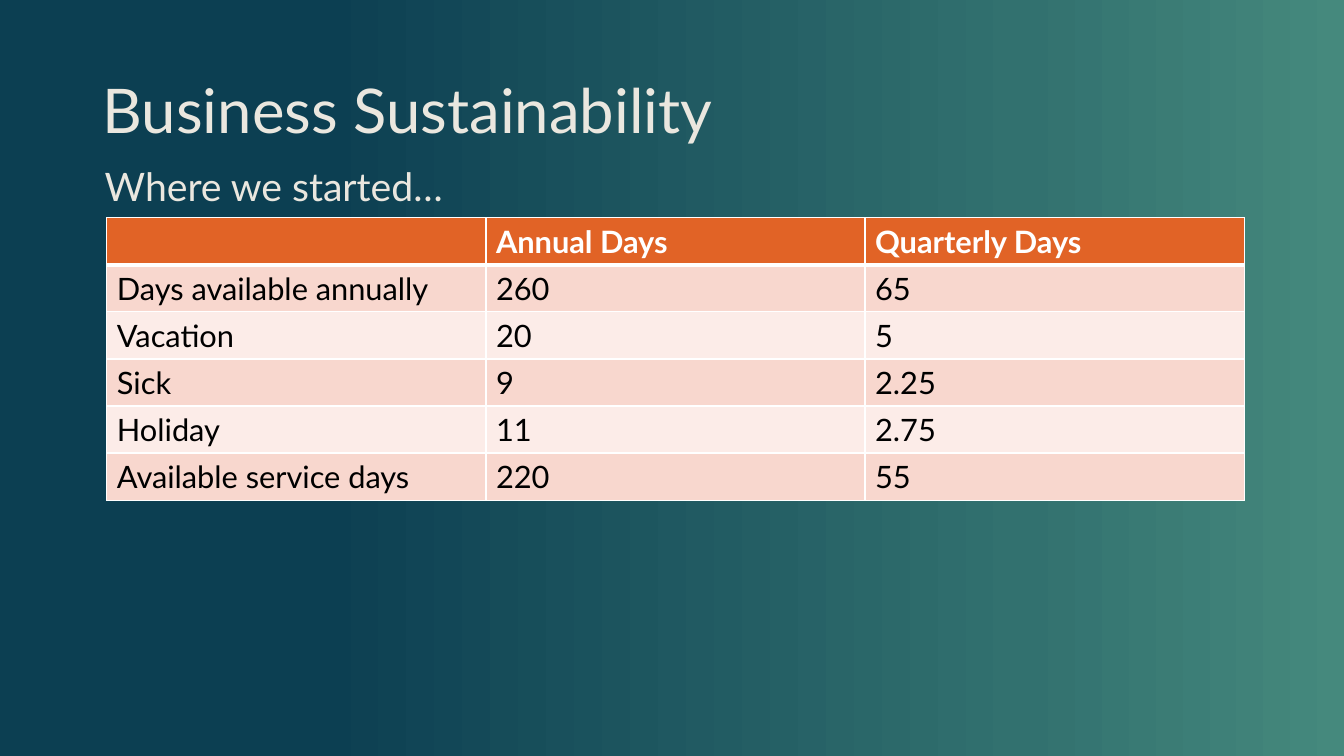
from copy import deepcopy
from dataclasses import dataclass

from pptx import Presentation
from pptx.dml.color import RGBColor
from pptx.enum.text import MSO_ANCHOR
from pptx.oxml.ns import qn
from pptx.slide import Slide
from pptx.table import _Cell
from pptx.text.text import _Paragraph
from pptx.util import Inches, Pt
from lxml.etree import SubElement

FONT = "Lato"
COLORS = {
    "navy": "0C3F52",
    "teal": "32716F",
    "green": "45897D",
    "cream": "EAE7DF",
    "orange": "E16326",
    "dark_band": "F8D7CE",
    "light_band": "FCECE8",
    "white": "FFFFFF",
    "black": "000000",
}
BACKGROUND_STOPS = [(0.24, "navy"), (0.76, "teal"), (1.0, "green")]


@dataclass
class Heading:
    text: str
    left: float
    top: float
    size: float


HEADINGS = [
    Heading("Where we started…", 0.94, 1.15, 28),
    Heading("Business Sustainability", 0.92, 0.4, 44),
]
DAYS = [
    ("", "Annual Days", "Quarterly Days"),
    ("Days available annually", "260", "65"),
    ("Vacation", "20", "5"),
    ("Sick", "9", "2.25"),
    ("Holiday", "11", "2.75"),
    ("Available service days", "220", "55"),
]


def rgb(name: str) -> RGBColor:
    return RGBColor.from_string(COLORS[name])


def write(para: _Paragraph, text: str, *, size: float, color: str, bold: bool = False) -> None:
    para.font.size = Pt(size)
    if not text:
        # An empty cell takes its line height from the end-of-paragraph size.
        SubElement(para._p, qn("a:endParaRPr"), sz=str(size * 100))
        return
    span = para.add_run()
    span.text = text
    span.font.name = FONT
    span.font.size = Pt(size)
    span.font.bold = bold
    span.font.color.rgb = rgb(color)


def paint_background(page: Slide) -> None:
    fill = page.background.fill
    fill.gradient()
    fill.gradient_angle = 0
    first_stop = page.element.find(".//" + qn("a:gs"))
    first_stop.addnext(deepcopy(first_stop))
    for stop, (position, color) in zip(fill.gradient_stops, BACKGROUND_STOPS):
        stop.position = position
        stop.color.rgb = rgb(color)


def add_heading(page: Slide, heading: Heading) -> None:
    box = page.shapes.add_textbox(
        Inches(heading.left), Inches(heading.top), Inches(11.5), Inches(1.45)
    )
    frame = box.text_frame
    frame.word_wrap = True
    frame.vertical_anchor = MSO_ANCHOR.MIDDLE
    para = frame.paragraphs[0]
    para.line_spacing = 0.9
    write(para, heading.text, size=heading.size, color="cream")


def set_borders(cell: _Cell, **widths: float) -> None:
    """Draw white borders; widths are points keyed by side: L, R, T, B."""
    properties = cell._tc.get_or_add_tcPr()
    for index, (side, width) in enumerate(widths.items()):
        line = SubElement(properties, qn(f"a:ln{side}"), w=str(Pt(width)))
        solid = SubElement(line, qn("a:solidFill"))
        SubElement(solid, qn("a:srgbClr"), val=COLORS["white"])
        properties.insert(index, line)


def add_days_table(page: Slide) -> None:
    frame = page.shapes.add_table(
        len(DAYS), len(DAYS[0]), Inches(1.06), Inches(2.16), Inches(11.28), Inches(2.8)
    )
    table = frame.table
    for row_index, row in enumerate(DAYS):
        header = row_index == 0
        band = "orange" if header else "dark_band" if row_index % 2 else "light_band"
        for column_index, text in enumerate(row):
            cell = table.cell(row_index, column_index)
            cell.fill.solid()
            cell.fill.fore_color.rgb = rgb(band)
            set_borders(cell, L=1, R=1, T=3 if row_index == 1 else 1, B=3 if header else 1)
            write(
                cell.text_frame.paragraphs[0],
                text,
                size=22,
                color="white" if header else "black",
                bold=header,
            )


def main() -> None:
    deck = Presentation()
    deck.slide_width = Inches(13.33)
    deck.slide_height = Inches(7.5)
    page = deck.slides.add_slide(deck.slide_layouts[6])
    paint_background(page)
    subtitle, title = HEADINGS
    add_heading(page, subtitle)
    add_days_table(page)
    add_heading(page, title)
    deck.save("out.pptx")


if __name__ == "__main__":
    main()
